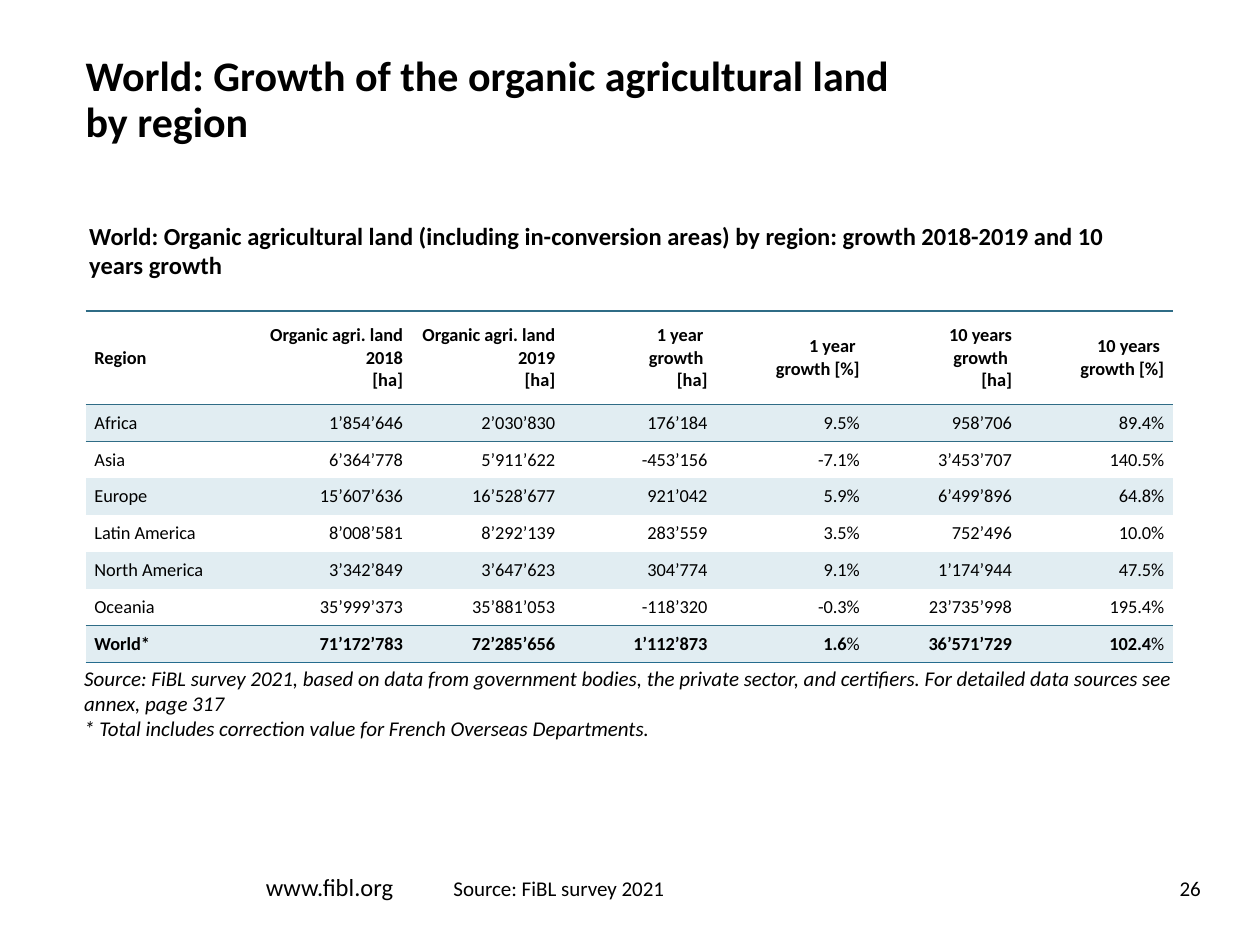
import pptx
import pptx.util
import pptx.dml.color
import pptx.enum.text
import pptx.oxml
import pptx.oxml.ns

Inches, Pt = pptx.util.Inches, pptx.util.Pt
ALIGN, ANCHOR = pptx.enum.text.PP_ALIGN, pptx.enum.text.MSO_ANCHOR
INK = {"text": "000000", "white": "FFFFFF", "band": "E1EDF2",
       "rule": "2F6C86", "base": "256C8E"}
PLAIN = "{2D5ABB26-0587-4C30-8999-92F81FD0307C}"
HEAD = ["Region", "Organic agri. land 2018\n[ha]", "Organic agri. land 2019\n[ha]",
        "1 year \ngrowth \n[ha]", "1 year \ngrowth [%]",
        "10 years\ngrowth \n[ha]", "10 years \ngrowth [%]"]
ROWS = [
    ["Africa", "1’854’646", "2’030’830", "176’184", "9.5%", "958’706", "89.4%"],
    ["Asia", "6’364’778", "5’911’622", "-453’156", "-7.1%", "3’453’707", "140.5%"],
    ["Europe", "15’607’636", "16’528’677", "921’042", "5.9%", "6’499’896", "64.8%"],
    ["Latin America", "8’008’581", "8’292’139", "283’559", "3.5%", "752’496", "10.0%"],
    ["North America", "3’342’849", "3’647’623", "304’774", "9.1%", "1’174’944", "47.5%"],
    ["Oceania", "35’999’373", "35’881’053", "-118’320", "-0.3%", "23’735’998", "195.4%"],
    ["World*", "71’172’783", "72’285’656", "1’112’873", "1.6%", "36’571’729", "102.4%"],
]


def color(name):
    """Return the named colour."""
    return pptx.dml.color.RGBColor.from_string(INK[name])


def write(para, text, size=12, bold=False, italic=False, align=ALIGN.LEFT, lead=None):
    """Add formatted text to a paragraph, with a line break at each newline."""
    para.alignment = align
    if lead:
        para.line_spacing = lead
    for num, line in enumerate(text.split("\n")):
        if num:
            para.add_line_break()
        run = para.add_run()
        run.text = line
        font = run.font
        font.name, font.size = "Calibri", Pt(size)
        font.bold, font.italic = bold, italic
        font.color.rgb = color("text")


def label(slide, box, text, anchor=ANCHOR.TOP, inset=(0.1, 0.05), **style):
    """Place a wrapped text box."""
    frame = slide.shapes.add_textbox(*map(Inches, box)).text_frame
    frame.word_wrap = True
    frame.vertical_anchor = anchor
    frame.margin_left = frame.margin_right = Inches(inset[0])
    frame.margin_top = frame.margin_bottom = Inches(inset[1])
    write(frame.paragraphs[0], text, **style)


def rule(cell, side, name):
    """Draw a one-point border on the top or bottom of a cell."""
    line = pptx.oxml.parse_xml(
        f'<a:ln{side} {pptx.oxml.ns.nsdecls("a")} w="{Pt(1)}"><a:solidFill>'
        f'<a:srgbClr val="{INK[name]}"/></a:solidFill></a:ln{side}>')
    cell._tc.get_or_add_tcPr().append(line)


def fill_cell(cell, row, col, text):
    """Write and style one cell according to its row and column."""
    last = len(ROWS)
    cell.vertical_anchor = ANCHOR.MIDDLE
    cell.margin_left = cell.margin_right = Inches(0.07)
    cell.margin_top = cell.margin_bottom = 0
    if row in (0, 1, last):
        rule(cell, "T", "rule")
    if row in (0, last - 1, last):
        rule(cell, "B", "base" if row == last else "rule")
    cell.fill.solid()
    cell.fill.fore_color.rgb = color("band" if row % 2 else "white")
    para = cell.text_frame.paragraphs[0]
    style = {"size": 10.5, "align": ALIGN.RIGHT if col else ALIGN.LEFT}
    if row == last and text.endswith("%"):
        write(para, text[:-1], bold=True, **style)
        write(para, "%", **style)
    else:
        write(para, text, bold=row in (0, last), **style)


def grid(slide, box):
    """Build the table of land by region in the given box."""
    left, top, width, height = box
    first, head = 1.38, 0.74
    data = [HEAD] + ROWS
    shape = slide.shapes.add_table(len(data), len(HEAD), *map(Inches, box))
    table = shape.table
    table.first_row = table.horz_banding = False
    table._tbl.tblPr.find(pptx.oxml.ns.qn("a:tableStyleId")).text = PLAIN
    for num, col in enumerate(table.columns):
        col.width = Inches((width - first) / (len(HEAD) - 1) if num else first)
    for num, row in enumerate(table.rows):
        row.height = Inches((height - head) / len(ROWS) if num else head)
    for row, items in enumerate(data):
        for col, text in enumerate(items):
            fill_cell(table.cell(row, col), row, col, text)


def header(slide, box):
    """Place the slide title."""
    label(slide, box, "World: Growth of the organic agricultural land \nby region",
          inset=(0, 0), size=24, bold=True, lead=0.9)


def body(slide, box):
    """Place the caption, the table and its notes."""
    left, top, width, height = box
    label(slide, (left, top, width, 0.57),
          "World: Organic agricultural land (including in-conversion areas) by region: "
          "growth 2018-2019 and 10 years growth",
          anchor=ANCHOR.MIDDLE, size=14, bold=True)
    grid(slide, (left + 0.07, top + 0.77, 8.63, 2.79))
    label(slide, (left - 0.04, top + height - 0.71, 8.85, 0.71),
          "Source: FiBL survey 2021, based on data from government bodies, the private "
          "sector, and certifiers. For detailed data sources see annex, page 317 \n"
          "* Total includes correction value for French Overseas Departments.",
          italic=True)


def footer(slide, box):
    """Place the web address, the source and the page number."""
    left, top, width, height = box
    edge = {"anchor": ANCHOR.BOTTOM, "inset": (0, 0.05)}
    label(slide, (left, top, 1.3, height), "www.fibl.org", size=14, **edge)
    label(slide, (left + 1.39, top + 0.04, 1.95, 0.3), "Source: FiBL survey 2021")
    label(slide, (left + width - 0.49, top + 0.04, 0.49, 0.3), "26",
          align=ALIGN.RIGHT, **edge)


def main():
    """Build and save the slide."""
    deck = pptx.Presentation()
    deck.slide_width, deck.slide_height = Inches(10), Inches(7.5)
    slide = deck.slides.add_slide(deck.slide_layouts[6])
    header(slide, (0.68, 0.44, 8.65, 0.69))
    body(slide, (0.61, 1.7, 8.69, 4.24))
    footer(slide, (2.11, 6.86, 7.42, 0.34))
    deck.save("out.pptx")


if __name__ == "__main__":
    main()
